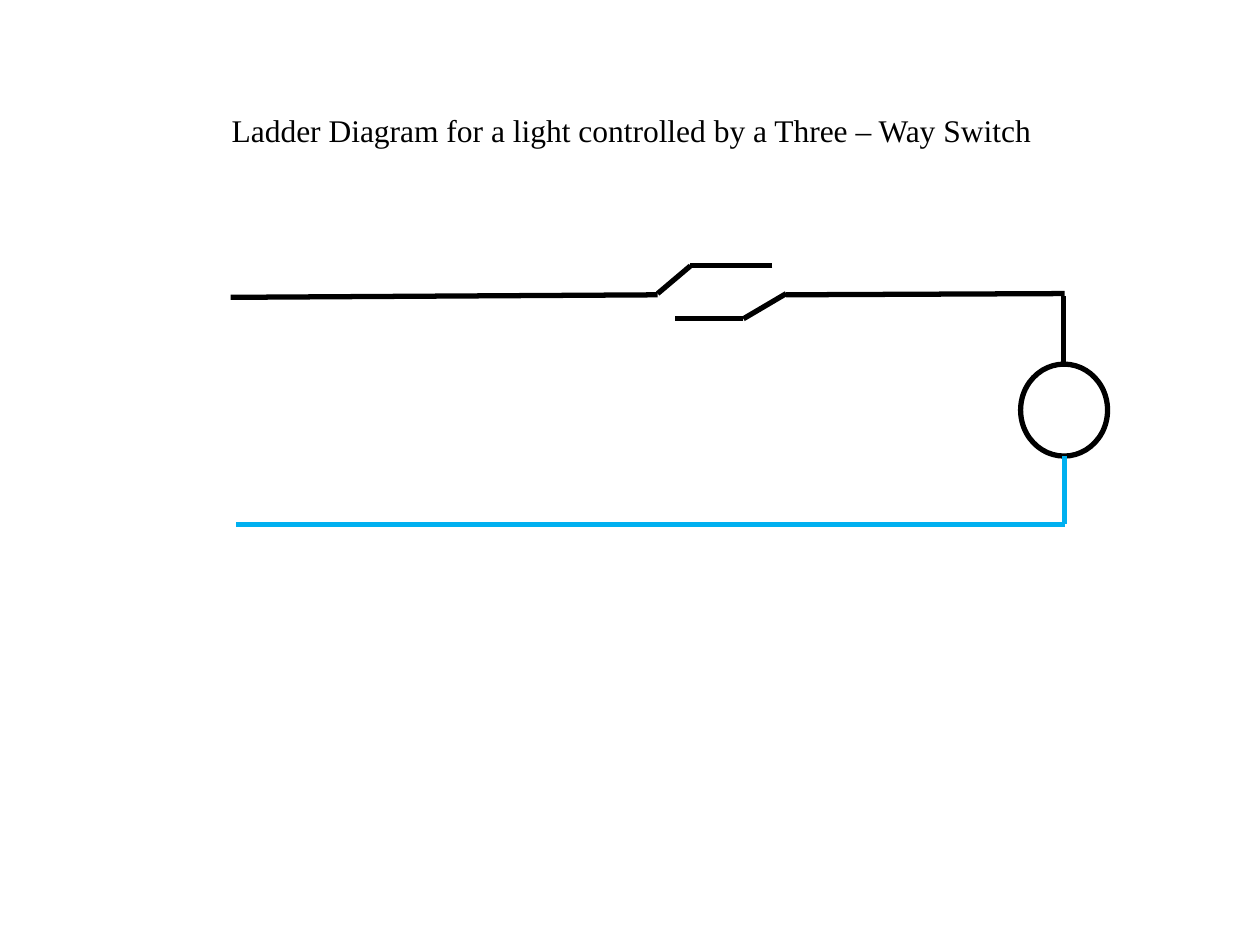
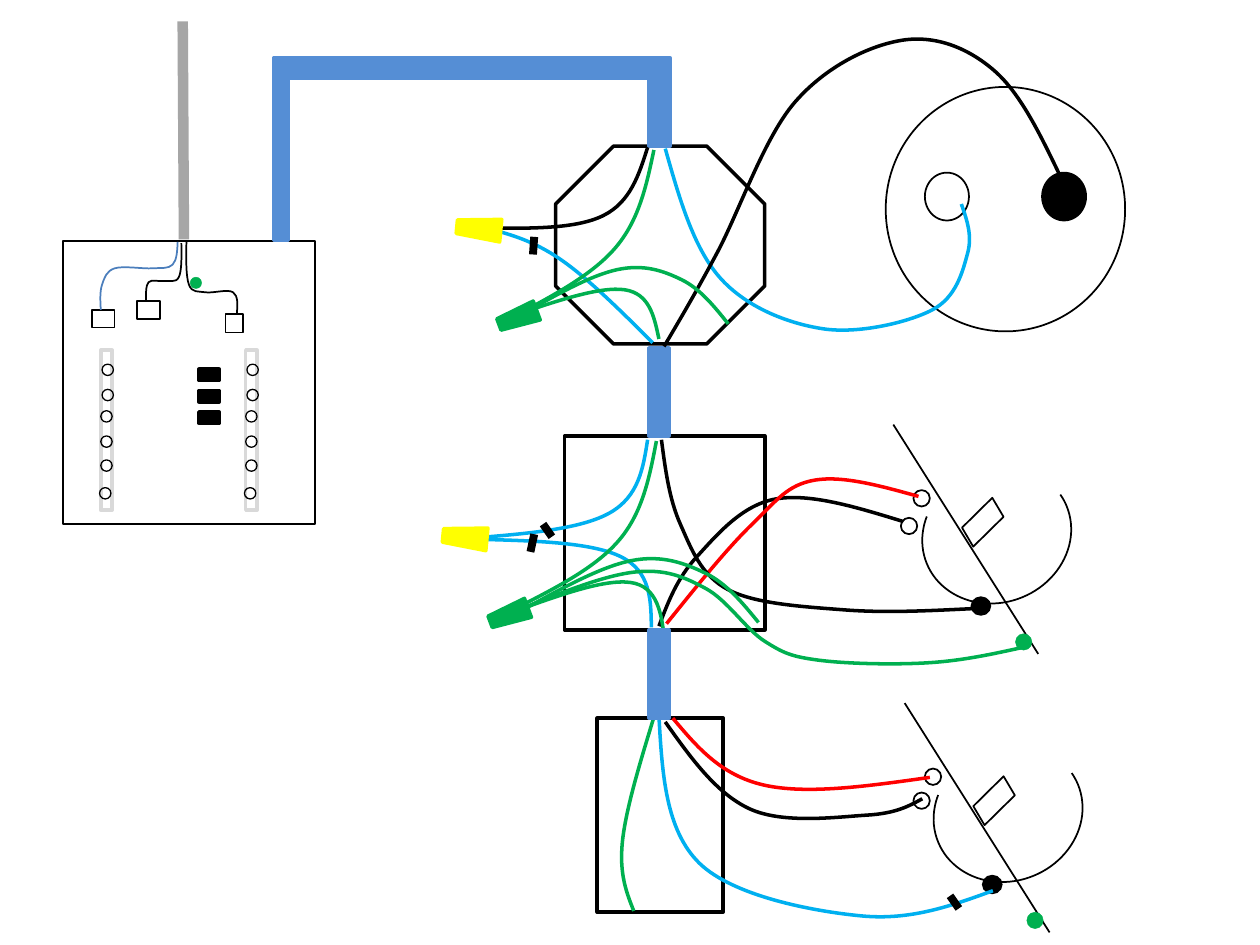
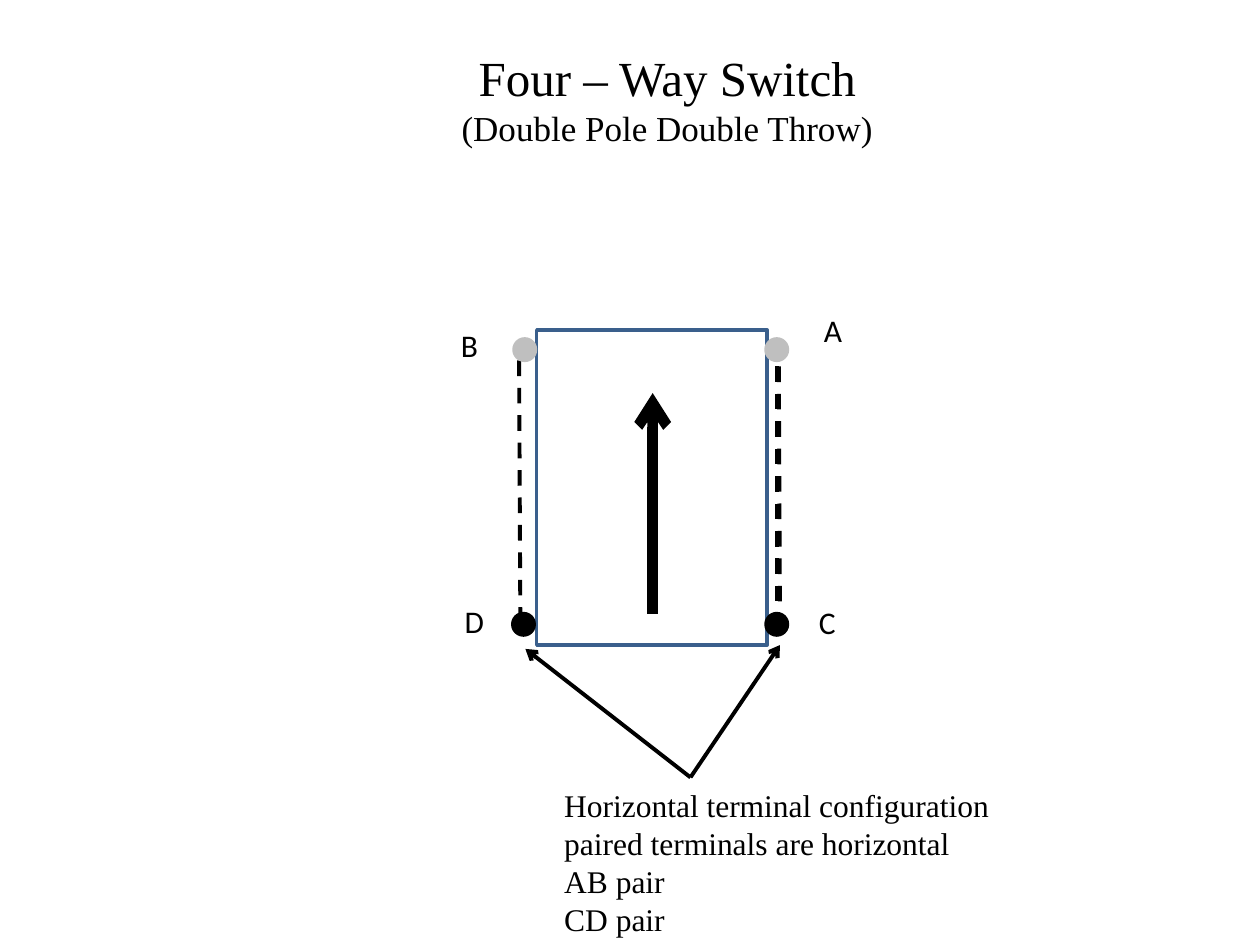
from lxml import etree
from pptx import Presentation
from pptx.dml.color import RGBColor
from pptx.enum.dml import MSO_LINE
from pptx.enum.shapes import MSO_CONNECTOR, MSO_SHAPE
from pptx.enum.text import MSO_AUTO_SIZE, PP_ALIGN
from pptx.oxml.ns import qn
from pptx.util import Inches, Pt

COLORS = {
    "black": "000000", "white": "FFFFFF", "red": "FF0000", "green": "00B050",
    "neutral": "00B0F0", "cable": "558ED5", "yellow": "FFFF00",
    "service": "A6A6A6", "thin_blue": "4B7EBC", "bus": "D9D9D9",
    "outline": "3A5F8C", "brass": "BFBFBF",
}
SERIF, SANS = "Times New Roman", "Calibri"


def smooth_controls(points):
    """Return the Bezier points, after the first, of a smooth curve through points."""
    def blend(a, b, weight):
        return tuple(p + (q - p) * weight for p, q in zip(a, b))

    def handle(index, sign):
        before, here, after = points[index - 1:index + 2]
        return tuple(h + sign * (a - b) / 6 for b, h, a in zip(before, here, after))

    last = len(points) - 1
    result = []
    for i in range(last):
        leaving = handle(i, 1) if i > 0 else None
        arriving = handle(i + 1, -1) if i + 1 < last else None
        leaving = leaving or blend(points[i], arriving, 0.5)
        arriving = arriving or blend(leaving, points[i + 1], 0.5)
        result += [leaving, arriving, points[i + 1]]
    return result


class Diagram:
    """Holds the presentation, its style and the slide being drawn."""

    def __init__(self):
        self.presentation = Presentation()
        self.presentation.slide_width = Inches(10)
        self.presentation.slide_height = Inches(7.5)
        self.slide = None

    def new_slide(self):
        self.slide = self.presentation.slides.add_slide(self.presentation.slide_layouts[6])

    def color(self, name):
        return RGBColor.from_string(COLORS[name])

    def style(self, shape, fill, line, weight):
        shape.shadow.inherit = False
        if fill:
            shape.fill.solid()
            shape.fill.fore_color.rgb = self.color(fill)
        else:
            shape.fill.background()
        shape.line.color.rgb = self.color(line)
        shape.line.width = Pt(weight)

    def shape(self, kind, box, fill=None, line="black", weight=1, rotation=0):
        shape = self.slide.shapes.add_shape(kind, *map(Inches, box))
        self.style(shape, fill, line, weight)
        shape.rotation = rotation
        return shape

    def rectangle(self, box, **style):
        return self.shape(MSO_SHAPE.RECTANGLE, box, **style)

    def circle(self, left, top, size, height=None, **style):
        return self.shape(MSO_SHAPE.OVAL, (left, top, size, height or size), **style)

    def line(self, start, end, color="black", weight=1, dashed=False, arrow=False):
        connector = self.slide.shapes.add_connector(
            MSO_CONNECTOR.STRAIGHT, *map(Inches, start + end))
        connector.line.color.rgb = self.color(color)
        connector.line.width = Pt(weight)
        if dashed:
            connector.line.dash_style = MSO_LINE.DASH
        properties = connector.element.spPr
        if arrow:
            etree.SubElement(properties.find(qn("a:ln")), qn("a:tailEnd"), type="arrow")
        etree.SubElement(properties, qn("a:effectLst"))

    def wire(self, color, *points, weight=2):
        """Draw a smooth curve through the points."""
        start, *others = [tuple(map(Inches, point)) for point in [points[0], *smooth_controls(points)]]
        builder = self.slide.shapes.build_freeform(*start)
        builder.add_line_segments(others, close=False)
        shape = builder.convert_to_shape()
        self.style(shape, None, color, weight)
        path = next(shape.element.iter(qn("a:path")))
        segments = path.findall(qn("a:lnTo"))
        for first in range(0, len(segments), 3):
            curve = etree.SubElement(path, qn("a:cubicBezTo"))
            for segment in segments[first:first + 3]:
                curve.append(segment[0])
                path.remove(segment)

    def text(self, box, *lines, font=SERIF, align=PP_ALIGN.LEFT):
        """Write one paragraph for each (words, size) pair."""
        frame = self.slide.shapes.add_textbox(*map(Inches, box)).text_frame
        frame.word_wrap = True
        frame.auto_size = MSO_AUTO_SIZE.SHAPE_TO_FIT_TEXT
        for index, (words, size) in enumerate(lines):
            paragraph = frame.add_paragraph() if index else frame.paragraphs[0]
            paragraph.alignment = align
            run = paragraph.add_run()
            run.text = words
            run.font.size = Pt(size)
            run.font.name = font
            run.font.color.rgb = self.color("black")

    def cable(self, *box):
        self.rectangle(box, fill="cable", line="cable", weight=2)

    def wire_nut(self, box, color, rotation):
        self.shape(MSO_SHAPE.FLOWCHART_MANUAL_OPERATION, box, fill=color, line=color,
                   weight=2, rotation=rotation)

    def breaker_panel(self):
        self.rectangle((0.5, 1.91, 2, 2.25), fill="white")
        self.line((1.45, 0.17), (1.46, 1.9), "service", 6)
        for lug in ((1.09, 2.39, 0.18, 0.14), (1.79, 2.49, 0.14, 0.15), (0.73, 2.46, 0.18, 0.14)):
            self.rectangle(lug)
        for row in range(3):
            self.rectangle((1.58, 2.93 + 0.17 * row, 0.16, 0.09), fill="black", weight=2)
        self.wire("thin_blue", (1.41, 1.92), (1.37, 2.1), (1.21, 2.13), (0.91, 2.13),
                  (0.81, 2.26), (0.8, 2.46), weight=1)
        self.wire("black", (1.44, 1.93), (1.42, 2.2), (1.3, 2.23), (1.18, 2.24),
                  (1.16, 2.38), weight=1)
        self.wire("black", (1.48, 1.92), (1.5, 2.26), (1.63, 2.32), (1.85, 2.32),
                  (1.88, 2.49), weight=1)
        self.circle(1.51, 2.2, 0.09, fill="green", line="green", weight=0.25)
        screws = ((0.01, 2.89), (0.01, 3.09), (0, 3.26), (0, 3.46), (0, 3.65), (-0.01, 3.87))
        for bus_left in (0.8, 1.95):
            self.rectangle((bus_left, 2.78, 0.09, 1.27), line="bus", weight=2)
            for offset, top in screws:
                self.circle(bus_left + offset, top, 0.09, weight=0.75)

    def three_way_switch(self, left, top):
        arc = self.shape(MSO_SHAPE.ARC, (left + 0.22, top + 0.34, 1.2, 1.07), rotation=157.7)
        for index, degrees in enumerate((169.91, 37.02)):
            arc.adjustments[index] = degrees * 60000 / 100000
        self.line((left, top), (left + 1.15, top + 1.82))
        self.circle(left + 0.16, top + 0.52, 0.13)
        self.circle(left + 0.62, top + 1.37, 0.15, 0.14, fill="black")
        self.shape(MSO_SHAPE.PARALLELOGRAM, (left + 0.52, top + 0.69, 0.38, 0.17), rotation=315.4)
        self.circle(left + 0.97, top + 1.66, 0.13, fill="green", line="green", weight=0.25)


def ladder_diagram(diagram):
    diagram.new_slide()
    diagram.line((8.45, 4.16), (1.87, 4.16), "neutral", 3)
    diagram.circle(8.1, 2.89, 0.69, 0.73, weight=3)
    diagram.line((8.45, 4.16), (8.45, 3.62), "neutral", 3)
    hot_lines = (
        ((8.45, 2.33), (6.24, 2.34)), ((6.24, 2.33), (5.9, 2.53)),
        ((5.9, 2.53), (5.36, 2.53)), ((5.22, 2.34), (1.83, 2.36)),
        ((5.22, 2.33), (5.48, 2.11)), ((6.13, 2.11), (5.48, 2.11)),
        ((8.44, 2.89), (8.44, 2.35)),
    )
    for start, end in hot_lines:
        diagram.line(start, end, weight=3)
    diagram.text((1.74, 0.83, 6.71, 0.4),
                 ("Ladder Diagram for a light controlled by a Three – Way Switch", 18))


def wiring_diagram(diagram):
    diagram.new_slide()
    diagram.breaker_panel()

    diagram.shape(MSO_SHAPE.OCTAGON, (4.41, 1.16, 1.66, 1.57), weight=2)
    diagram.circle(7.03, 0.69, 1.9, 1.94)
    diagram.circle(7.34, 1.37, 0.35, 0.38)
    diagram.circle(8.27, 1.37, 0.35, 0.38, fill="black")
    for box in ((4.48, 3.46, 1.59, 1.54), (4.74, 5.7, 1, 1.54)):
        diagram.rectangle(box, weight=2)

    diagram.cable(5.15, 2.76, 0.16, 0.7)
    diagram.cable(2.17, 0.6, 0.12, 1.31)
    diagram.cable(2.17, 0.46, 2.98, 0.16)
    diagram.cable(5.15, 0.46, 0.17, 0.7)

    diagram.three_way_switch(7.09, 3.37)
    diagram.three_way_switch(7.18, 5.58)
    diagram.circle(7.15, 4.11, 0.13)
    diagram.circle(7.25, 6.29, 0.13)

    wires = (
        ("green", (5.19, 5.69), (4.94, 6.68), (5.03, 7.23)),
        ("neutral", (5.28, 1.18), (5.71, 2.2), (6.53, 2.61), (7.4, 2.46), (7.68, 2.01), (7.63, 1.62)),
        ("black", (5.14, 1.17), (4.79, 1.71), (3.86, 1.81)),
        ("neutral", (5.18, 2.72), (4.45, 2.06), (3.86, 1.81)),
        ("neutral", (5.14, 3.49), (4.84, 4.07), (3.76, 4.27)),
        ("neutral", (5.17, 4.98), (4.93, 4.42), (3.77, 4.28)),
        ("neutral", (5.23, 5.69), (5.55, 6.85), (6.84, 7.27), (7.88, 7.07)),
        ("black", (5.28, 5.73), (5.95, 6.42), (6.88, 6.47), (7.32, 6.34)),
        ("black", (5.23, 4.97), (5.53, 4.42), (6.16, 3.96), (7.17, 4.14)),
        ("red", (5.34, 5.7), (6.06, 6.23), (7.38, 6.17)),
        ("red", (5.29, 4.95), (5.97, 4.16), (6.47, 3.81), (7.29, 3.94)),
        ("black", (5.25, 3.49), (5.4, 4.16), (5.78, 4.68), (6.7, 4.84), (7.72, 4.83)),
        ("black", (5.27, 2.75), (5.69, 2.01), (6.31, 0.81), (7.16, 0.32), (7.89, 0.56), (8.42, 1.41)),
        ("green", (5.19, 1.19), (4.89, 1.96), (4.08, 2.51)),
        ("green", (5.23, 2.69), (4.96, 2.3), (4.06, 2.51)),
        ("green", (4.15, 2.49), (4.9, 2.14), (5.41, 2.22), (5.78, 2.57)),
        ("green", (5.21, 3.5), (4.92, 4.28), (4.11, 4.82)),
        ("green", (5.28, 5.16), (5.04, 4.63), (4.09, 4.85)),
        ("green", (4.15, 4.84), (5.01, 4.45), (5.6, 4.55), (6.02, 4.94)),
    )
    for color, *points in wires:
        diagram.wire(color, *points)

    tape_marks = (
        ((4.24, 1.88), (4.23, 2.02)), ((4.31, 4.16), (4.38, 4.26)),
        ((4.24, 4.24), (4.21, 4.38)), ((7.54, 7.11), (7.61, 7.21)),
    )
    for start, end in tape_marks:
        diagram.line(start, end, weight=4.5)

    diagram.cable(5.15, 5, 0.16, 0.7)
    diagram.wire("green", (4.14, 4.83), (5.04, 4.54), (5.6, 4.67), (6.07, 5.09),
                 (6.5, 5.24), (7.37, 5.26), (8.11, 5.14))
    for left, top in ((3.71, 1.64), (3.6, 4.09)):
        diagram.wire_nut((left, top, 0.18, 0.35), "yellow", 95.2)
    for left, top in ((3.96, 4.72), (4.03, 2.36)):
        diagram.wire_nut((left, top, 0.16, 0.32), "green", 69.6)


def four_way_switch(diagram):
    diagram.new_slide()
    diagram.text((1.17, 0.33, 8.25, 0.91), ("Four – Way Switch", 28),
                 ("(Double Pole Double Throw)", 20), align=PP_ALIGN.CENTER)
    diagram.rectangle((4.26, 2.62, 1.83, 2.5), line="outline", weight=2)
    diagram.line((5.18, 4.87), (5.18, 3.12), weight=6, arrow=True)
    for letter, left, top in (("A", 6.44, 2.42), ("D", 3.59, 4.73),
                              ("C", 6.4, 4.74), ("B", 3.56, 2.54)):
        diagram.text((left, top, 0.66, 0.41), (letter, 18), font=SANS)

    for start, end in (((6.18, 2.69), (6.19, 4.79)), ((4.12, 2.86), (4.13, 4.95)),
                       ((6.17, 2.69), (6.17, 4.87))):
        diagram.line(start, end, weight=2.25, dashed=True)
    for left, top, color in ((4.07, 4.87, "black"), (6.08, 4.87, "black"),
                             (4.08, 2.69, "brass"), (6.08, 2.69, "brass")):
        diagram.circle(left, top, 0.17, fill=color, line=color, weight=2)

    diagram.text((4.38, 6.19, 3.73, 1.31),
                 ("Horizontal terminal configuration paired terminals are horizontal", 18),
                 ("AB pair", 18), ("CD pair", 18))
    for terminal in ((4.17, 5.15), (6.19, 5.12)):
        diagram.line((5.48, 6.17), terminal, weight=2.25, arrow=True)


def main():
    diagram = Diagram()
    ladder_diagram(diagram)
    wiring_diagram(diagram)
    four_way_switch(diagram)
    diagram.presentation.save("out.pptx")


if __name__ == "__main__":
    main()
